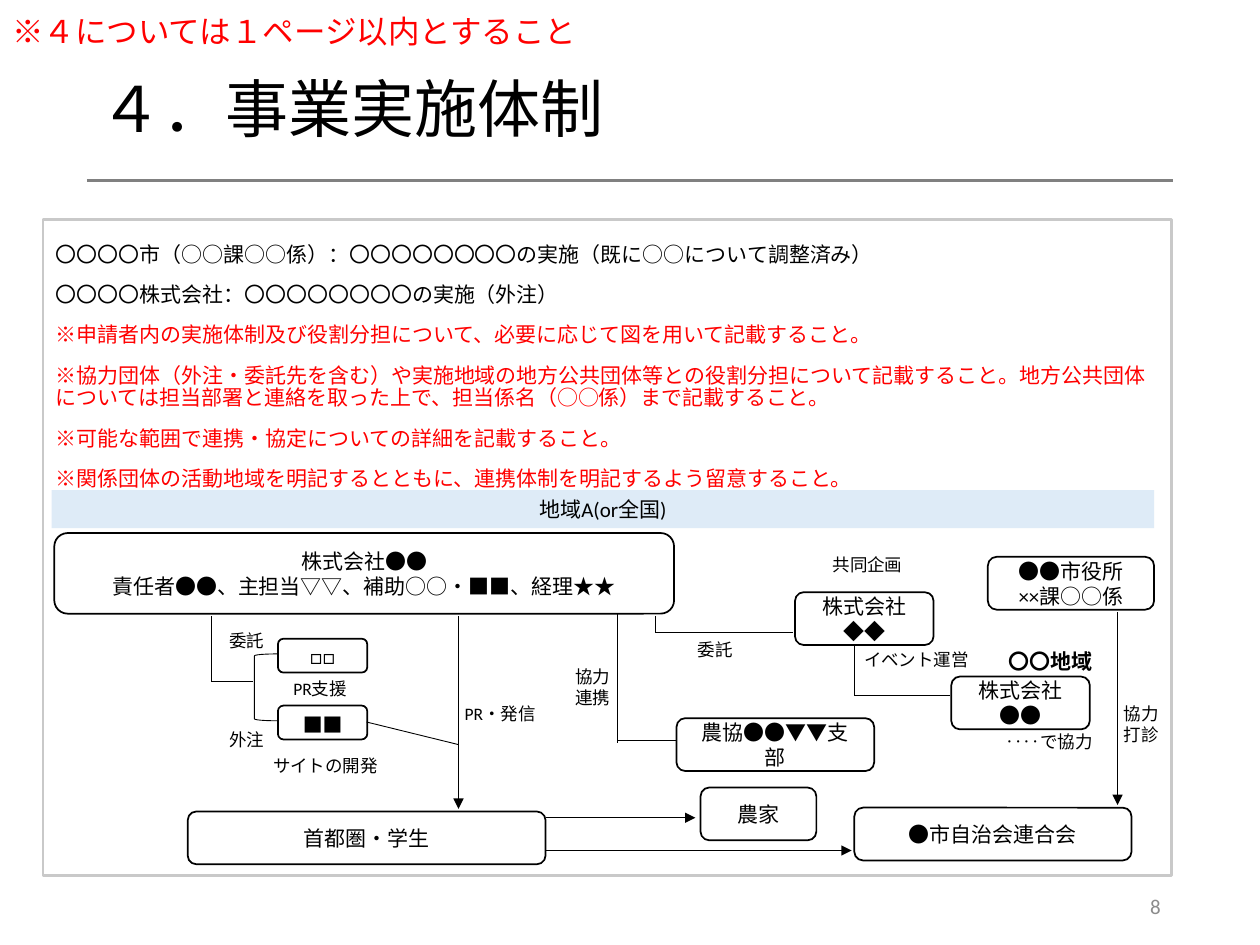
from lxml.etree import SubElement
from pptx import Presentation
from pptx.dml.color import RGBColor
from pptx.enum.shapes import MSO_CONNECTOR, MSO_SHAPE
from pptx.enum.text import MSO_ANCHOR, MSO_AUTO_SIZE, PP_ALIGN
from pptx.oxml.ns import qn
from pptx.util import Pt

LATIN = "Calibri"
JAPANESE = "Noto Sans CJK JP"
BLACK, RED, GRAY = "000000", "FF0000", "8C8C8C"

ROLES = [
    "〇〇〇〇市（○○課○○係）：〇〇〇〇〇〇〇〇の実施（既に○○について調整済み）",
    "〇〇〇〇株式会社：〇〇〇〇〇〇〇〇の実施（外注）",
]
INSTRUCTIONS = [
    "※申請者内の実施体制及び役割分担について、必要に応じて図を用いて記載すること。",
    "※協力団体（外注・委託先を含む）や実施地域の地方公共団体等との役割分担について記載すること。"
    "地方公共団体については担当部署と連絡を取った上で、担当係名（○○係）まで記載すること。",
    "※可能な範囲で連携・協定についての詳細を記載すること。",
    "※関係団体の活動地域を明記するとともに、連携体制を明記するよう留意すること。",
]

# text, left, top, width, height; \v is a line break inside a paragraph
ORGANISATIONS = [
    ("株式会社●●\n責任者●●、主担当▽▽、補助○○・■■、経理★★", 31, 304.6, 354.2, 46.1),
    ("株式会社\v◆◆", 454.3, 338.4, 79.2, 30.2),
    ("株式会社●●", 543.6, 386.6, 79.2, 30.2),
    ("●●市役所\v××課○○係", 564.5, 318.2, 95, 30.2),
    ("□□", 158.8, 365, 51.1, 19.4),
    ("■■", 158.8, 403.2, 51.1, 19.4),
    ("首都圏・学生", 107.3, 463.7, 204.5, 30.2),
    ("●市自治会連合会", 488.2, 461.5, 158.4, 30.2),
    ("農協●●▼▼支部", 386.6, 410.4, 113, 30.2),
    ("農家", 400.3, 450, 66.2, 30.2),
]
LABELS = [
    ("‥‥で協力", 567.4, 414, 70, 19.4),
    ("PR支援", 160.6, 383.8, 58.3, 19.4),
    ("サイトの開発", 149, 427.7, 79.2, 19.4),
    ("委託", 123.8, 356.4, 35, 19.4),
    ("外注", 123.8, 413.3, 35, 19.4),
    ("委託", 391.7, 361.4, 35, 19.4),
    ("イベント運営", 486.7, 367.2, 79.2, 19.4),
    ("共同企画", 468.7, 313.2, 71.3, 19.4),
    ("PR・発信", 258.5, 398.2, 60.5, 19.4),
    ("協力\n打診", 635, 398.2, 60.5, 31.7),
    ("協力連携", 321.8, 377.3, 35, 31.7),
]
# from x, from y, to x, to y
LINKS = [
    (121, 352, 121, 390),
    (121, 389.5, 144.7, 389.5),
    (488.2, 368.6, 488.2, 398),
    (488.2, 397.4, 543, 397.4),
    (374.4, 352, 374.4, 361.4),
    (374.4, 361.4, 453, 361.4),
    (352.8, 350.6, 352.8, 424.8),
    (352.8, 423.4, 386.6, 423.4),
    (209.5, 412.6, 262, 425.5),
]
ARROWS = [
    (262, 352, 262, 462.2),
    (311.8, 467.3, 397.4, 467.3),
    (311.8, 486, 486.7, 486),
    (638.6, 350, 638.6, 460),
]


def rgb(hex_code):
    return RGBColor.from_string(hex_code)


def format_paragraph(paragraph, size, color=BLACK, align=PP_ALIGN.LEFT, bold=False, latin=LATIN):
    paragraph.alignment = align
    for run in paragraph.runs:
        run.font.size = Pt(size)
        run.font.bold = bold
        run.font.name = latin
        run.font.color.rgb = rgb(color)
        SubElement(run.font._element, qn("a:ea"), typeface=JAPANESE)


def write(shape, text, size, anchor=MSO_ANCHOR.TOP, wrap=True, **style):
    frame = shape.text_frame
    frame.text = text
    frame.word_wrap = wrap
    frame.vertical_anchor = anchor
    for paragraph in frame.paragraphs:
        format_paragraph(paragraph, size, **style)


def place(shape, left, top, width, height):
    shape.left, shape.top = Pt(left), Pt(top)
    shape.width, shape.height = Pt(width), Pt(height)


def add_outline(slide, kind, area, line_width=None, fill=None):
    shape = slide.shapes.add_shape(kind, *map(Pt, area))
    shape.shadow.inherit = False
    if fill:
        shape.fill.solid()
        shape.fill.fore_color.rgb = rgb(fill)
    else:
        shape.fill.background()
    if line_width:
        shape.line.color.rgb = rgb(BLACK)
        shape.line.width = Pt(line_width)
    else:
        shape.line.fill.background()
    return shape


def add_organisation(slide, text, *area, line_width=1, bold=False):
    box = add_outline(slide, MSO_SHAPE.ROUNDED_RECTANGLE, area, line_width)
    write(box, text, 12, MSO_ANCHOR.MIDDLE, align=PP_ALIGN.CENTER, bold=bold)


def add_label(slide, text, *area, size=10, **style):
    write(slide.shapes.add_textbox(*map(Pt, area)), text, size, **style)


def add_link(slide, *ends, color=BLACK, width=0.5, arrow=False):
    link = slide.shapes.add_connector(MSO_CONNECTOR.STRAIGHT, *map(Pt, ends))
    link.line.color.rgb = rgb(color)
    link.line.width = Pt(width)
    if arrow:
        SubElement(link.line._get_or_add_ln(), qn("a:tailEnd"), type="triangle")
    SubElement(link._element.spPr, qn("a:effectLst"))


def fill_title(title):
    place(title, 49.7, 28.8, 620.6, 70.6)
    write(title, "４．事業実施体制", 36, MSO_ANCHOR.MIDDLE, latin=JAPANESE)
    title.text_frame.auto_size = MSO_AUTO_SIZE.NONE
    title.text_frame.paragraphs[0].line_spacing = 0.9


def fill_body(body):
    place(body, 24.5, 125.3, 645.1, 375.1)
    body.line.color.rgb = rgb("C9C9C9")
    body.line.width = Pt(1.5)
    frame = body.text_frame
    frame.text = "\n".join(ROLES + INSTRUCTIONS)
    frame.word_wrap = True
    frame.auto_size = MSO_AUTO_SIZE.NONE
    frame.vertical_anchor = MSO_ANCHOR.TOP
    frame.margin_top = frame.margin_bottom = Pt(14.4)
    for index, paragraph in enumerate(frame.paragraphs):
        properties = paragraph._p.get_or_add_pPr()
        properties.set("marL", "0")
        properties.set("indent", "0")
        SubElement(properties, qn("a:buNone"))
        paragraph.line_spacing = 0.9
        paragraph.space_before = Pt(10 if index else 0)
        if index < len(ROLES):
            format_paragraph(paragraph, 12, align=PP_ALIGN.JUSTIFY)
        else:
            format_paragraph(paragraph, 12, color=RED)


def draw_structure(slide):
    region = add_outline(slide, MSO_SHAPE.RECTANGLE, (29.5, 280, 630, 21.8), fill="DEEBF7")
    write(region, "地域A(or全国)", 12, MSO_ANCHOR.MIDDLE, align=PP_ALIGN.CENTER)
    add_outline(slide, MSO_SHAPE.LEFT_BRACKET, (145.4, 373.7, 13, 38.2), 0.5)
    add_organisation(slide, "〇〇地域", 560.9, 362.9, 79.2, 30.2, line_width=None, bold=True)
    for organisation in ORGANISATIONS:
        add_organisation(slide, *organisation)
    for label in LABELS:
        add_label(slide, *label)
    for link in LINKS:
        add_link(slide, *link)
    for arrow in ARROWS:
        add_link(slide, *arrow, arrow=True)


def main():
    deck = Presentation()
    deck.slide_width, deck.slide_height = Pt(720), Pt(540)
    slide = deck.slides.add_slide(deck.slide_layouts[1])
    fill_title(slide.shapes.title)
    fill_body(slide.placeholders[1])
    add_link(slide, 49.7, 103, 670.3, 103, color="808080", width=1.5)
    add_label(slide, "※４については１ページ以内とすること", 0, 3.6, 342, 28.8,
              size=18, color=RED, wrap=False)
    add_label(slide, "8", 508.3, 503.3, 162, 28.8, size=12, color=GRAY,
              align=PP_ALIGN.RIGHT, anchor=MSO_ANCHOR.MIDDLE)
    draw_structure(slide)
    deck.save("out.pptx")


if __name__ == "__main__":
    main()
